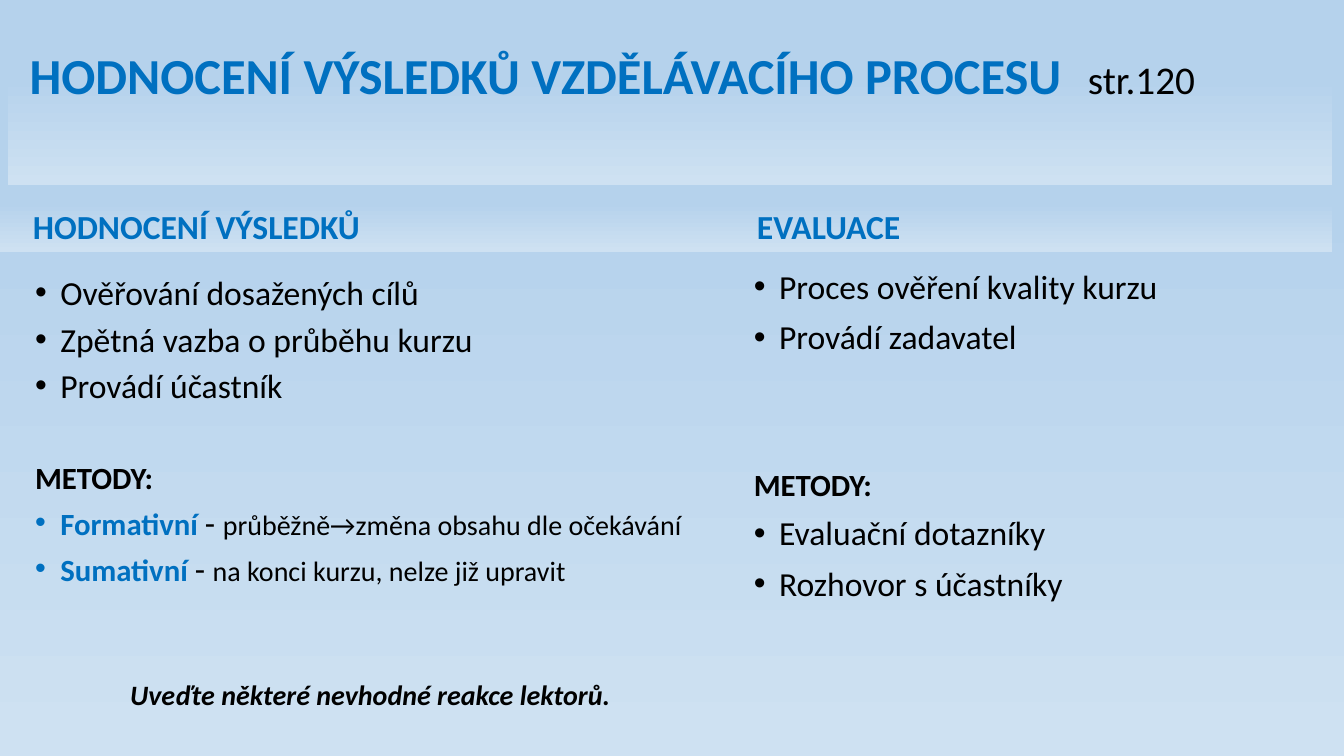
from pptx import Presentation
from pptx.util import Pt
from pptx.dml.color import RGBColor as Rgb
from pptx.enum.text import MSO_ANCHOR as Anchor
from lxml.etree import SubElement as Sub
from pptx.oxml.ns import qn

BLUE = Rgb(0x00, 0x70, 0xC0)
BLACK = Rgb(0x00, 0x00, 0x00)
SKY = Rgb(0xB5, 0xD2, 0xEC)
PALE = Rgb(0xCE, 0xE1, 0xF2)

PLAIN = dict(size=Pt(24), bold=False, italic=False, color=BLACK)
HEAD = dict(PLAIN, bold=True, color=BLUE)
TITLE = dict(HEAD, size=Pt(36))
PAGE = dict(PLAIN, size=Pt(28))
LABEL = dict(PLAIN, size=Pt(22), bold=True)
TERM = dict(LABEL, color=BLUE)
SMALL = dict(PLAIN, size=Pt(20))
TASK = dict(SMALL, bold=True, italic=True)


def item(*runs):
    return dict(runs=runs, dot=True)


def line(text, style, gap=10, left=0, tab=None):
    return dict(runs=[(text, style)], gap=gap, left=left, tab=tab)


title = dict(runs=[("HODNOCENÍ VÝSLEDKŮ VZDĚLÁVACÍHO PROCESU\t", TITLE),
                   ("str.120", PAGE)], gap=0, tab=761.5)
left = [
    item(("Ověřování dosažených cílů", PLAIN)),
    item(("Zpětná vazba o průběhu kurzu", PLAIN)),
    item(("Provádí účastník", PLAIN)),
    line("METODY:", LABEL, gap=43.4),
    item(("Formativní ", TERM), ("- ", PLAIN),
         ("průběžně→změna obsahu dle očekávání", SMALL)),
    item(("Sumativní ", TERM), ("- ", PLAIN),
         ("na konci kurzu, nelze již upravit", SMALL)),
    line("Uveďte některé nevhodné reakce lektorů.", TASK, gap=69, left=67.8),
]
right = [
    item(("Proces ověření kvality kurzu", PLAIN)),
    item(("Provádí zadavatel", PLAIN)),
    line("METODY:", LABEL, gap=80.6),
    item(("Evaluační dotazníky", PLAIN)),
    item(("Rozhovor s účastníky", PLAIN)),
]

boxes = [
    dict(at=(5.8, 28.8, 946, 103.7), pad=(15.3, 7.7), fill=True, rows=[title]),
    dict(at=(0, 132.5, 531.4, 47.5), pad=(23.5, 3.6), fill=True,
         anchor=Anchor.BOTTOM, rows=[line("HODNOCENÍ VÝSLEDKŮ", HEAD)]),
    dict(at=(18, 196.6, 495.4, 336.2), space=0.8, rows=left),
    dict(at=(522.7, 132.5, 429.1, 47.5), pad=(18, 3.6), fill=True,
         anchor=Anchor.BOTTOM, rows=[line("EVALUACE", HEAD)]),
    dict(at=(531.4, 189.4, 388.1, 342.7), rows=right),
]


def shade(fill):
    fill.gradient()
    fill.gradient_angle = 270
    for stop, (pos, color) in zip(fill.gradient_stops, [(0.26, SKY), (0.99, PALE)]):
        stop.position = pos
        stop.color.rgb = color


def write(para, row, space):
    para.line_spacing = space
    para.space_before = Pt(row.get("gap", 10))
    props = para._p.get_or_add_pPr()
    dot = row.get("dot")
    props.set("marL", str(Pt(18 if dot else row.get("left", 0))))
    props.set("indent", str(Pt(-18 if dot else 0)))
    if dot:
        Sub(props, qn("a:buFont"), typeface="Arial")
        Sub(props, qn("a:buChar"), char="•")
    if row.get("tab"):
        tabs = Sub(props, qn("a:tabLst"))
        Sub(tabs, qn("a:tab"), pos=str(Pt(row["tab"])), algn="l")
    for text, style in row["runs"]:
        run = para.add_run()
        run.text = text
        run.font.name = "Calibri"
        for key, value in style.items():
            if key == "color":
                run.font.color.rgb = value
            else:
                setattr(run.font, key, value)


def main():
    deck = Presentation()
    deck.slide_width, deck.slide_height = Pt(960), Pt(540)
    slide = deck.slides.add_slide(deck.slide_layouts[6])
    shade(slide.background.fill)
    for box in boxes:
        shape = slide.shapes.add_textbox(*map(Pt, box["at"]))
        if box.get("fill"):
            shade(shape.fill)
        frame = shape.text_frame
        side, top = box.get("pad", (7.2, 3.6))
        form = dict(word_wrap=True, margin_left=Pt(side), margin_top=Pt(top),
                    vertical_anchor=box.get("anchor", Anchor.TOP))
        for key, value in form.items():
            setattr(frame, key, value)
        for num, row in enumerate(box["rows"]):
            para = frame.add_paragraph() if num else frame.paragraphs[0]
            write(para, row, box.get("space", 0.9))
    deck.save("out.pptx")


if __name__ == "__main__":
    main()
